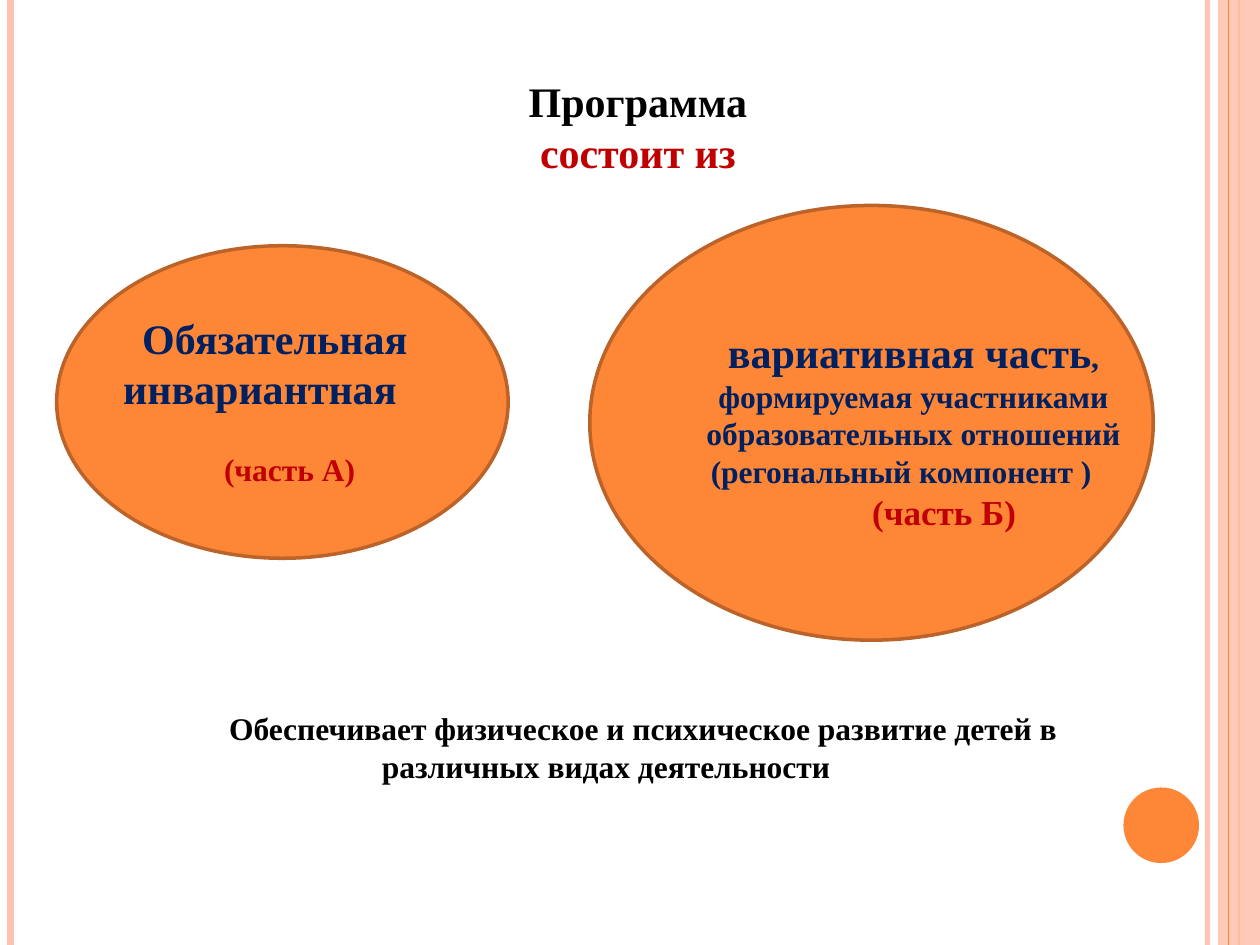
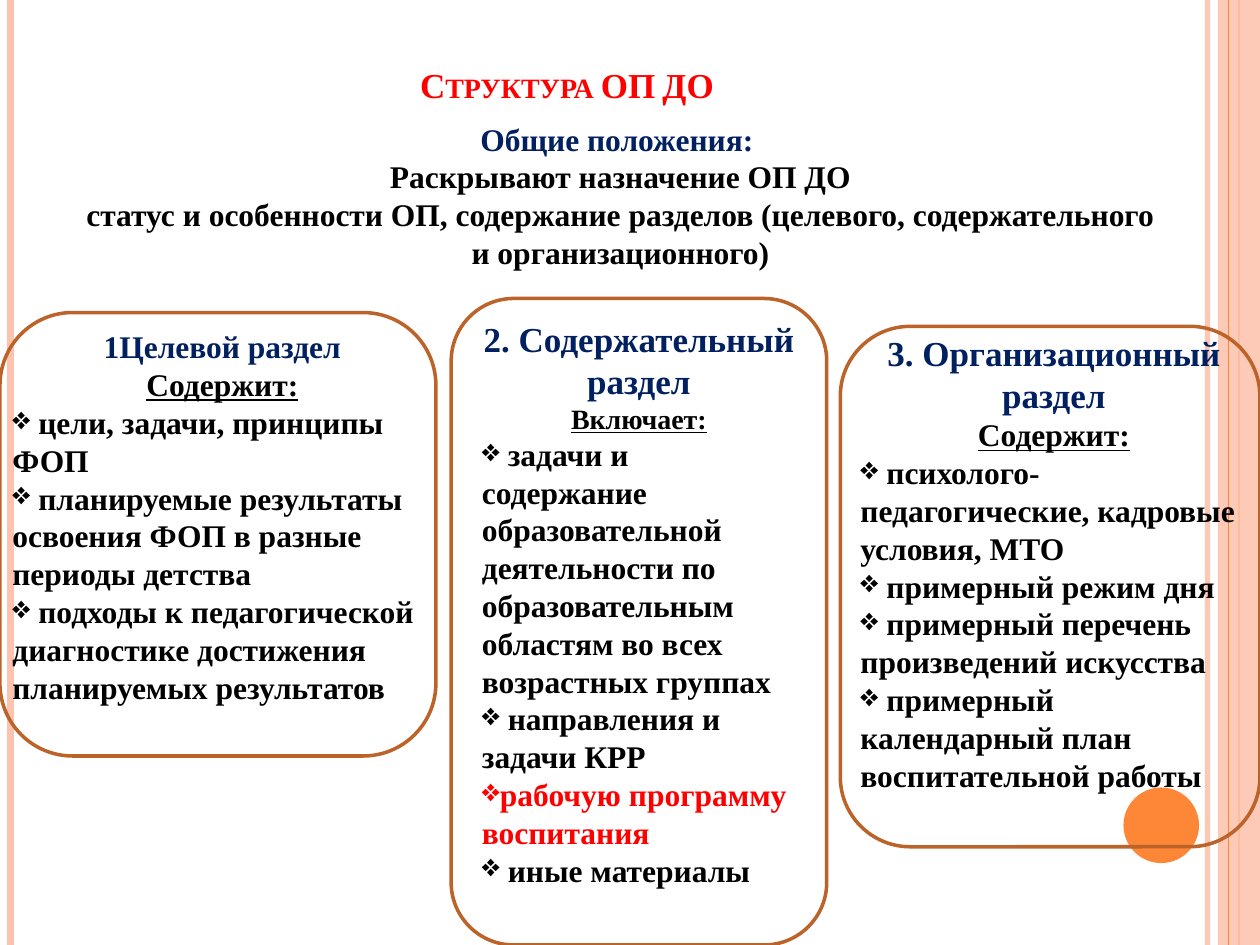
from lxml.etree import SubElement
from pptx import Presentation
from pptx.dml.color import RGBColor
from pptx.enum.shapes import MSO_CONNECTOR as Connector, MSO_SHAPE as Shape
from pptx.enum.text import MSO_ANCHOR as Anchor, MSO_AUTO_SIZE as AutoSize, PP_ALIGN as Align
from pptx.oxml.ns import qn
from pptx.util import Pt

COLORS = {
    "orange": "FE8637", "peach": "FEC3AE", "rust": "BC6329", "navy": "002060",
    "crimson": "C00000", "red": "FF0000", "black": "000000",
}
FONT = "Times New Roman"
WIDTH, HEIGHT = 720, 540


def rgb(name):
    return RGBColor.from_string(COLORS[name])


def points(*lengths):
    return [Pt(length) for length in lengths]


def set_opacity(shape, percent):
    for color in shape._element.spPr.iter(qn("a:srgbClr")):
        SubElement(color, qn("a:alpha")).set("val", str(percent * 1000))


def write(frame, text, size=18, color="black", align=Align.CENTER, underline=False,
          bullet=False, small_caps=False, left=0, right=0, first=0, before=0, new=True):
    """Add a paragraph, or with new=False continue the last one."""
    para = frame.paragraphs[-1]
    if new:
        if para.runs:
            para = frame.add_paragraph()
        para.alignment = Align.LEFT if bullet else align
        para.space_before = Pt(before)
        props = para._p.get_or_add_pPr()
        for key, value in (("marL", left), ("marR", right), ("indent", first)):
            props.set(key, str(Pt(value)))
        if bullet:
            SubElement(props, qn("a:buChar")).set("char", "❖")
    run = para.add_run()
    run.text = text
    font = run.font
    font.name, font.size, font.bold, font.underline = FONT, Pt(size), True, underline
    font.color.rgb = rgb(color)
    if small_caps:
        run._r.get_or_add_rPr().set("cap", "small")


def add_shape(slide, kind, box, fill=None, line=None):
    shape = slide.shapes.add_shape(kind, *points(*box))
    shape.shadow.inherit = False
    if fill:
        shape.fill.solid()
        shape.fill.fore_color.rgb = rgb(fill)
    else:
        shape.fill.background()
    if line:
        shape.line.color.rgb = rgb(line)
        shape.line.width = Pt(2)
    else:
        shape.line.fill.background()
    return shape


def add_text_frame(slide, box):
    frame = slide.shapes.add_textbox(*points(*box)).text_frame
    frame.word_wrap = True
    return frame


def place_title(slide, box, anchor):
    title = slide.shapes.title
    title.left, title.top, title.width, title.height = points(*box)
    frame = title.text_frame
    frame.word_wrap, frame.auto_size, frame.vertical_anchor = True, AutoSize.NONE, anchor
    return frame


def add_stripe(slide, x, color, width):
    stripe = slide.shapes.add_connector(Connector.STRAIGHT, *points(x, 0, x, HEIGHT))
    stripe.line.color.rgb = rgb(color)
    stripe.line.width = Pt(width)
    SubElement(stripe._element.spPr, qn("a:effectLst"))
    return stripe


def decorate_master(prs, slide):
    """Build the side stripes and the disc, then move them to the master."""
    inner = add_stripe(slide, 690, "peach", 3)
    set_opacity(inner, 93)
    outer = add_stripe(slide, 6, "peach", 4.5)
    edge = add_stripe(slide, 708, "orange", 1.5)
    band = add_shape(slide, Shape.RECTANGLE, (696, 0, 24, HEIGHT), fill="peach")
    set_opacity(band, 87)
    thin = add_stripe(slide, 702, "orange", 0.75)
    disc = add_shape(slide, Shape.OVAL, (642, 450, 43.2, 43.2), fill="orange")
    tree = prs.slide_master.shapes._spTree
    for number, part in enumerate((inner, outer, edge, band, thin, disc), 100):
        part._element[0][0].set("id", str(number))
        tree.append(part._element)


def add_oval(slide, box, text_offset, text_size):
    add_shape(slide, Shape.OVAL, box, fill="orange", line="rust")
    x, y = box[0] + text_offset[0], box[1] + text_offset[1]
    return add_text_frame(slide, (x, y, *text_size))


def build_parts_slide(slide):
    title = place_title(slide, (291, 39.6, 147, 65.5), Anchor.TOP)
    write(title, "Программа", size=24)
    write(title, "состоит из", size=24, color="crimson")

    # Mandatory part
    mandatory = add_oval(slide, (32.4, 140.4, 258, 178.6), (23.8, 34.6), (201.6, 87))
    write(mandatory, "Обязательная", size=24, color="navy")
    write(mandatory, "инвариантная", size=24, color="navy", right=17)
    write(mandatory, "(часть А)", color="crimson", left=17, before=21)

    # Variable part
    variable = add_oval(slide, (337, 117.4, 322, 248.4), (59, 65.5), (252, 126))
    write(variable, "вариативная часть", size=24, color="navy")
    write(variable, ", формируемая участниками образовательных отношений", color="navy", new=False)
    write(variable, "(регональный компонент )", color="navy", right=14)
    write(variable, "(часть Б)", size=20, color="crimson", left=35)

    # Summary
    summary = add_text_frame(slide, (74.2, 401.8, 544.3, 51))
    write(summary, "Обеспечивает физическое и психическое развитие детей "
                   "в различных видах деятельности", first=42.5)


def fill_card(frame, heading, size, intro, intro_size, items):
    write(frame, heading, size=size, color="navy")
    write(frame, intro, size=intro_size, underline=True)
    for item in items:
        write(frame, " " + item, bullet=True)


def add_card(slide, box, text_box=None):
    """Outline a card; its text sits in text_box, relative to the card, or in the card itself."""
    card = add_shape(slide, Shape.ROUNDED_RECTANGLE, box, line="rust")
    if text_box:
        x, y, width, height = text_box
        return add_text_frame(slide, (box[0] + x, box[1] + y, width, height))
    frame = card.text_frame
    frame.word_wrap, frame.vertical_anchor = True, Anchor.MIDDLE
    frame.margin_bottom = Pt(25.2)
    return frame


def build_structure_slide(slide):
    title = place_title(slide, (0, 21.6, 648, 42.5), Anchor.BOTTOM)
    write(title, "Структура ОП ДО", size=20, color="red", small_caps=True)

    # General provisions
    general = add_text_frame(slide, (37.4, 64.8, 634.3, 94.3))
    write(general, "Общие положения:", color="navy", right=4)
    write(general, "Раскрывают назначение ОП ДО")
    write(general, "статус и особенности ОП, содержание разделов "
                   "(целевого, содержательного и организационного)")

    # Section 1
    goals = add_card(slide, (0, 178.6, 249.1, 253.4), (0, 5, 254.2, 225.4))
    fill_card(goals, "1Целевой раздел", 18, "Содержит:", 18, [
        "цели, задачи, принципы ФОП",
        "планируемые результаты освоения ФОП в разные периоды детства",
        "подходы к педагогической диагностике достижения планируемых результатов",
    ])

    # Section 2
    content = add_card(slide, (257.8, 170.6, 214.6, 369.4))
    fill_card(content, "2. Содержательный раздел", 20, "Включает:", 16, [
        "задачи и содержание образовательной деятельности по образовательным "
        "областям во всех возрастных группах",
        "направления и задачи КРР",
    ])
    write(content, "рабочую программу воспитания", color="red", bullet=True)
    write(content, " иные материалы", bullet=True)

    # Section 3
    organisation = add_card(slide, (480.2, 186.5, 239.8, 297.4), (4.4, -0.7, 235.4, 296))
    fill_card(organisation, "3. Организационный раздел", 20, "Содержит:", 18, [
        "психолого-педагогические, кадровые условия, МТО",
        "примерный режим дня",
        "примерный перечень произведений искусства",
        "примерный календарный план воспитательной работы",
    ])


def main():
    prs = Presentation()
    prs.slide_width, prs.slide_height = points(WIDTH, HEIGHT)
    title_only = prs.slide_layouts[5]
    parts, structure = (prs.slides.add_slide(title_only) for _ in range(2))
    decorate_master(prs, parts)
    build_parts_slide(parts)
    build_structure_slide(structure)
    prs.save("out.pptx")


if __name__ == "__main__":
    main()
